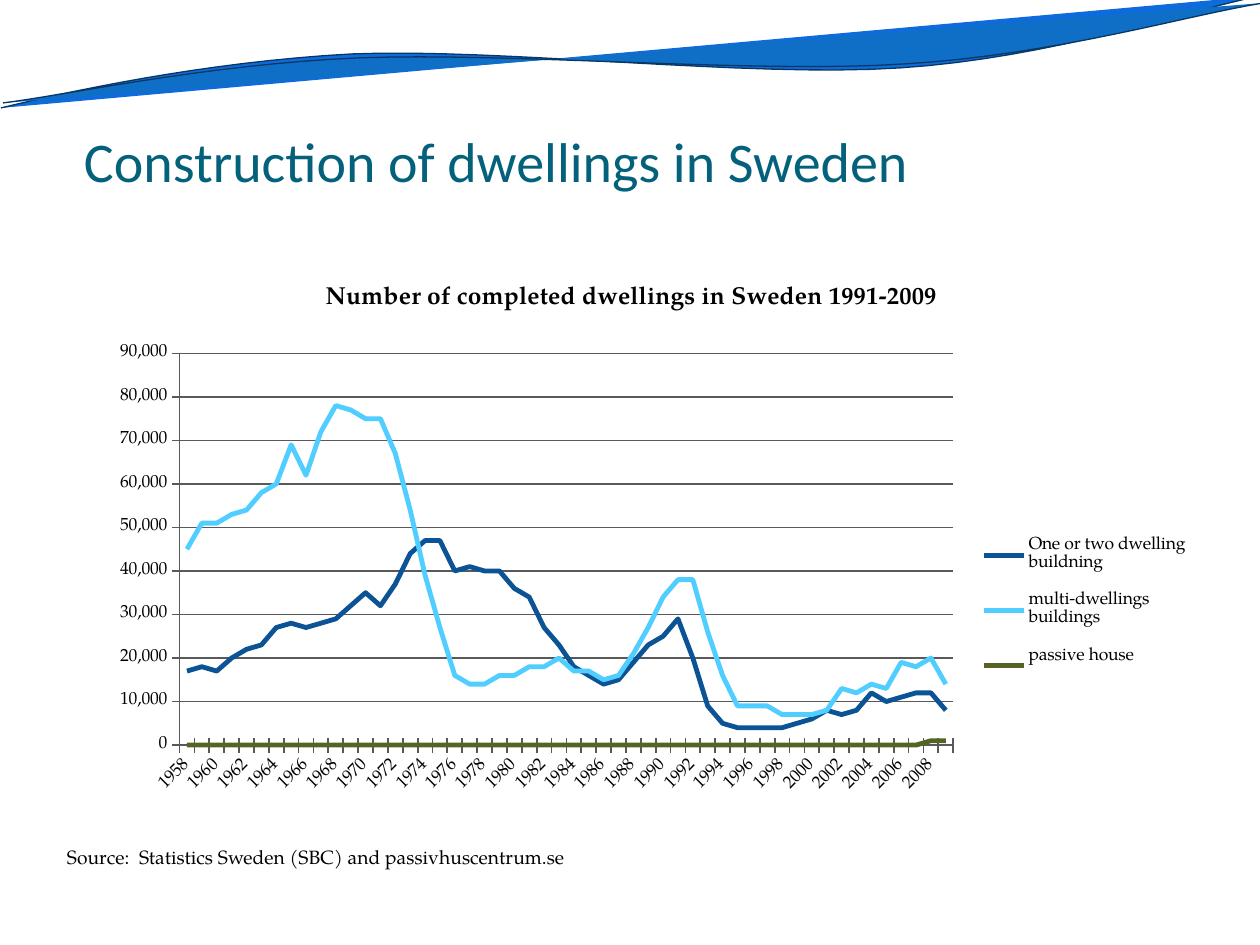
import dataclasses

import pptx
import pptx.chart.data
import pptx.dml.color
import pptx.enum.chart
import pptx.enum.text
import pptx.oxml
import pptx.oxml.ns
import pptx.util

PX_PER_INCH = 126


def px(length):
    return pptx.util.Emu(round(length * 914400 / PX_PER_INCH))


@dataclasses.dataclass(frozen=True)
class Theme:
    heading_font: str = "Calibri"
    body_font: str = "TeX Gyre Pagella"
    heading_size: int = 32
    chart_title_size: int = 14
    source_size: int = 11
    chart_size: int = 10
    series_width: float = 2.75
    heading: str = "04617B"
    text: str = "000000"
    axis: str = "595959"
    wave_line: str = "083763"
    back_wave: str = "0E6BDC"
    front_wave: str = "0F6FC6"
    single_homes: str = "0B5395"
    multi_homes: str = "4FCEFF"
    passive_homes: str = "546422"


WAVES = {
    "back_wave": [(1, 108), (63, 93), (202, 62), (352, 54), (501, 48),
                  (748, 78), (900, 68), (1052, 58), (1186, 11), (1260, -4)],
    "front_wave": [(3, 103), (62, 96), (209, 64), (359, 58), (510, 52),
                   (755, 74), (905, 64), (1056, 55), (1188, 15), (1264, 3)],
}

YEARS = [str(year) for year in range(1958, 2009)] + ["2009*"]

# Completed dwellings in thousands, one value a year
SERIES = [
    ("One or two dwelling buildning", "single_homes",
     [17, 18, 17, 20, 22, 23, 27, 28, 27, 28, 29, 32, 35, 32, 37, 44, 47, 47,
      40, 41, 40, 40, 36, 34, 27, 23, 18, 16, 14, 15, 19, 23, 25, 29, 20, 9,
      5, 4, 4, 4, 4, 5, 6, 8, 7, 8, 12, 10, 11, 12, 12, 8]),
    ("multi-dwellings buildings", "multi_homes",
     [45, 51, 51, 53, 54, 58, 60, 69, 62, 72, 78, 77, 75, 75, 67, 54, 39, 27,
      16, 14, 14, 16, 16, 18, 18, 20, 17, 17, 15, 16, 21, 27, 34, 38, 38, 26,
      16, 9, 9, 9, 7, 7, 7, 8, 13, 12, 14, 13, 19, 18, 20, 14]),
    ("passive house", "passive_homes", [0] * 50 + [1, 1]),
]


def sample_curve(points, steps=16):
    """Return points along a chain of cubic Bezier segments."""
    samples = [points[0]]
    for first in range(0, len(points) - 1, 3):
        controls = points[first:first + 4]
        for step in range(1, steps + 1):
            t = step / steps
            weights = ((1 - t) ** 3, 3 * t * (1 - t) ** 2,
                       3 * t ** 2 * (1 - t), t ** 3)
            samples.append(tuple(
                sum(weight * control[axis]
                    for weight, control in zip(weights, controls))
                for axis in (0, 1)))
    return samples


def set_layout(element, position, inner=False, **fractions):
    """Place a chart part by hand, as fractions of the chart area."""
    for old in element.findall(pptx.oxml.ns.qn("c:layout")):
        element.remove(old)
    target = '<c:layoutTarget val="inner"/>' if inner else ""
    modes = "".join(f'<c:{axis}Mode val="edge"/>' for axis in "xy")
    values = "".join(f'<c:{name} val="{value}"/>'
                     for name, value in fractions.items())
    element.insert(position, pptx.oxml.parse_xml(
        f'<c:layout {pptx.oxml.ns.nsdecls("c")}><c:manualLayout>'
        f'{target}{modes}{values}</c:manualLayout></c:layout>'))


class SlideBuilder:
    def __init__(self, slide, theme):
        self.slide = slide
        self.theme = theme

    def color(self, name):
        return pptx.dml.color.RGBColor.from_string(getattr(self.theme, name))

    def style_font(self, font, size, color="text", face="body_font", bold=False):
        font.name = getattr(self.theme, face)
        font.size = pptx.util.Pt(getattr(self.theme, size))
        font.color.rgb = self.color(color)
        font.bold = bold

    def style_line(self, line, color, width):
        line.color.rgb = self.color(color)
        line.width = pptx.util.Pt(width)

    def wave(self, color, controls):
        points = [(px(x), px(y)) for x, y in sample_curve(controls)]
        builder = self.slide.shapes.build_freeform(*points[0])
        builder.add_line_segments(points[1:], close=False)
        shape = builder.convert_to_shape()
        shape.shadow.inherit = False
        shape.fill.solid()
        shape.fill.fore_color.rgb = self.color(color)
        self.style_line(shape.line, "wave_line", 0.75)

    def text(self, text, box, margins, anchor, **style):
        shape = self.slide.shapes.add_textbox(*map(px, box))
        frame = shape.text_frame
        frame.word_wrap = True
        frame.vertical_anchor = anchor
        (frame.margin_left, frame.margin_top,
         frame.margin_right, frame.margin_bottom) = map(px, margins)
        frame.text = text
        self.style_font(frame.paragraphs[0].runs[0].font, **style)

    def line_chart(self, title, box):
        data = pptx.chart.data.CategoryChartData(number_format="#,##0")
        data.categories = YEARS
        for name, _, thousands in SERIES:
            data.add_series(name, [value * 1000 for value in thousands])
        chart = self.slide.shapes.add_chart(
            pptx.enum.chart.XL_CHART_TYPE.LINE, *map(px, box), data).chart
        self.style_font(chart.font, "chart_size")
        chart.plots[0].vary_by_categories = False
        for series, (_, color, _) in zip(chart.plots[0].series, SERIES):
            series.smooth = False
            series.marker.style = pptx.enum.chart.XL_MARKER_STYLE.NONE
            self.style_line(series.format.line, color, self.theme.series_width)
        self.chart_title(chart, title)
        self.chart_axes(chart)
        chart.has_legend = True
        chart.legend.position = pptx.enum.chart.XL_LEGEND_POSITION.RIGHT
        chart.legend.include_in_layout = False
        self.style_font(chart.legend.font, "chart_size")
        set_layout(chart.legend._element, 1, x=0.81, y=0.45, w=0.18, h=0.29)
        set_layout(chart._chartSpace.chart.plotArea, 0, inner=True,
                   x=0.094, y=0.169, w=0.689, h=0.672)

    def chart_title(self, chart, title):
        chart.has_title = True
        frame = chart.chart_title.text_frame
        frame.text = title
        self.style_font(frame.paragraphs[0].runs[0].font,
                        "chart_title_size", bold=True)
        set_layout(chart.chart_title._element, 1, x=0.22, y=0.04)

    def chart_axes(self, chart):
        years, dwellings = chart.category_axis, chart.value_axis
        for axis in (years, dwellings):
            axis.major_tick_mark = pptx.enum.chart.XL_TICK_MARK.CROSS
            axis.minor_tick_mark = pptx.enum.chart.XL_TICK_MARK.NONE
            self.style_font(axis.tick_labels.font, "chart_size")
            self.style_line(axis.format.line, "axis", 1)
        dwellings.minimum_scale = 0
        dwellings.maximum_scale = 90000
        dwellings.major_unit = 10000
        dwellings.tick_labels.number_format = "#,##0"
        dwellings.tick_labels.number_format_is_linked = False
        dwellings.has_major_gridlines = True
        self.style_line(dwellings.major_gridlines.format.line, "axis", 0.75)

        years.has_major_gridlines = False
        element = years._element
        body = element.find(".//" + pptx.oxml.ns.qn("a:bodyPr"))
        body.set("rot", "-2700000")
        body.set("vert", "horz")
        last = element.find(pptx.oxml.ns.qn("c:noMultiLvlLbl"))
        for tag, value in (("tickLblSkip", 2), ("tickMarkSkip", 1)):
            last.addprevious(pptx.oxml.parse_xml(
                f'<c:{tag} {pptx.oxml.ns.nsdecls("c")} val="{value}"/>'))


def main():
    presentation = pptx.Presentation()
    presentation.slide_width = px(1260)
    presentation.slide_height = px(945)
    slide = presentation.slides.add_slide(presentation.slide_layouts[6])
    builder = SlideBuilder(slide, Theme())
    anchors = pptx.enum.text.MSO_ANCHOR

    for color, controls in WAVES.items():
        builder.wave(color, controls)
    builder.text("Construction of dwellings in Sweden", (84, 116, 1114, 78),
                 (0, 6, 0, 0), anchors.BOTTOM, size="heading_size",
                 color="heading", face="heading_font")
    builder.line_chart("Number of completed dwellings in Sweden 1991-2009",
                       (74, 255, 1123, 583))
    builder.text("Source:  Statistics Sweden (SBC) and passivhuscentrum.se",
                 (54, 839, 1131, 37), (13, 6, 13, 6), anchors.TOP,
                 size="source_size")
    presentation.save("out.pptx")


if __name__ == "__main__":
    main()
